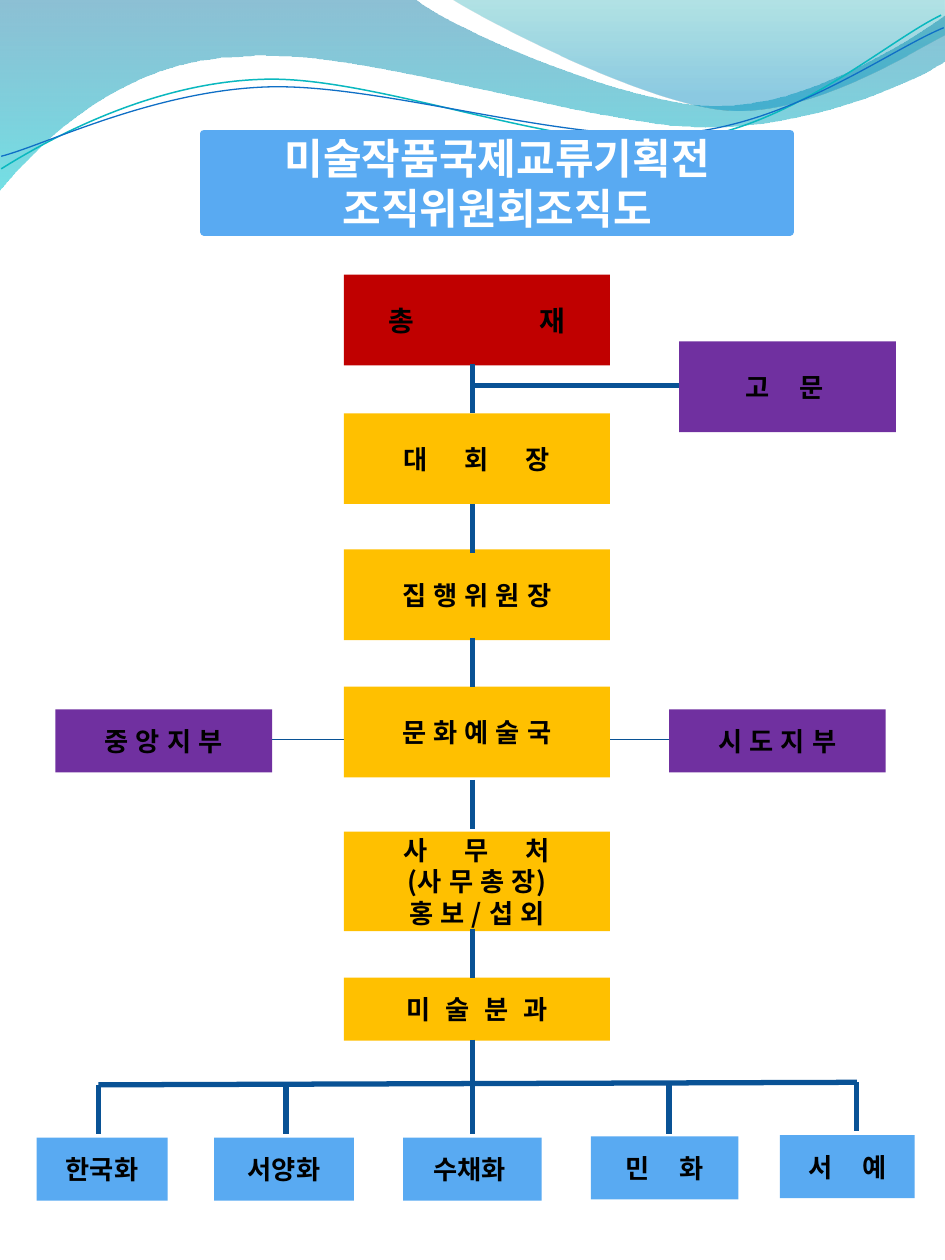
from dataclasses import dataclass

from lxml.etree import SubElement
from pptx import Presentation
from pptx.dml.color import RGBColor
from pptx.enum.shapes import MSO_CONNECTOR, MSO_SHAPE
from pptx.enum.text import MSO_ANCHOR, MSO_AUTO_SIZE, PP_ALIGN
from pptx.oxml.ns import qn
from pptx.util import Emu, Inches, Pt

COLORS = {
    "red": "C00000", "gold": "FFC000", "purple": "7030A0", "sky": "59AAF2",
    "link": "095295", "black": "000000", "white": "FFFFFF",
    "teal": "0AB8BF", "blue": "0F6FC6",
}
FONT = "Noto Sans CJK KR"
COLUMNS, ROWS = 75, 100
WIDTH, HEIGHT = Inches(7.5), Inches(10)
# Shares of the font size
SPACE_WIDTH, GAP_WIDTH, LINE_HEIGHT = 0.22, 0.28, 1.2
LOOSE_TRACKING = 0.35  # points, for labels with one space between letters

TRUNK_COL, TRUNK_LEFT, TRUNK_COLS, LINK_ROWS = 37.5, 27.3, 21.1, 3.9


@dataclass
class Box:
    lines: list[str]
    col: float
    row: float
    cols: float
    rows: float
    color: str
    gaps: tuple[int, ...] = (1,)  # width of each line's gaps, in spaces
    size: float = 15


@dataclass
class Link:
    start: tuple[float, float]
    end: tuple[float, float]
    weight: float = 3


@dataclass
class Stop:
    position: float
    color: str
    alpha: int


@dataclass
class Wave:
    """Steps of length two are line ends; those of length six are cubic curves."""
    start: tuple[float, float]
    steps: list[tuple[float, ...]]
    stops: tuple[Stop, ...] = ()
    color: str = ""
    weight: float = 0


def trunk_box(lines: list[str], row: float, rows: float = 7.2, **options) -> Box:
    return Box(lines, TRUNK_LEFT, row, TRUNK_COLS, rows, **{"color": "gold", **options})


WAVES = [
    Wave((0, 0), [
        (33, 0), (35.7, 2.2, 49.8, 8.4, 56.9, 8.4), (64, 8.4, 71.9, 3.4, 75, 1.2),
        (75, 4.8), (73.8, 5.8, 65.2, 10.1, 55.9, 10.1),
        (46.6, 10, 28.6, 3.7, 19.3, 4.5), (9.7, 4.7, 3.4, 11.1, 0, 15.1),
    ], stops=(Stop(0, "0074A1", 45), Stop(1, "00C6CF", 55))),
    Wave((35.9, 0), [
        (38.2, 1.5, 51.1, 8.2, 57.7, 8.7), (64.2, 9.2, 72.1, 4.3, 75, 2.8), (75, 0),
    ], stops=(Stop(0, "00A1A9", 30), Stop(0.8, "008BBF", 45))),
    Wave((0.1, 13.4), [
        (3.6, 11.2, 11.8, 6.6, 20.7, 6.3), (29.6, 5.9, 44.5, 12.1, 53.5, 11.2),
        (62.6, 10.4, 70.3, 3.3, 74.7, 1.2),
    ], color="teal", weight=0.85),
    Wave((0.1, 12.4), [
        (3.6, 11.5, 12.2, 7.2, 21.2, 6.9), (30.2, 6.6, 44.9, 11.4, 53.8, 10.6),
        (62.8, 9.9, 70.5, 4, 74.9, 2.2),
    ], color="blue", weight=0.75),
]
TITLE = Box(["미술작품국제교류기획전", "조직위원회조직도"], 16.2, 10.6, 46.5, 7.8, "sky", size=24)
BOXES = [
    trunk_box(["총 재"], 21.8, color="red", gaps=(16,), size=16),
    trunk_box(["대 회 장"], 32.8, gaps=(5,)),
    trunk_box(["집 행 위 원 장"], 43.6),
    trunk_box(["사 무 처", "(사 무 총 장)", "홍 보 / 섭 외"], 66, 7.9, gaps=(5, 1, 1)),
    trunk_box(["미 술 분 과"], 77.6, 5, gaps=(2,)),
    Box(["시 도 지 부"], 53.1, 56.3, 17.2, 5, "purple"),
    Box(["중 앙 지 부"], 4.4, 56.3, 17.2, 5, "purple"),
    Box(["한국화"], 2.9, 90.3, 10.4, 5, "sky"),
    Box(["서양화"], 17, 90.3, 11.1, 5, "sky"),
    Box(["수채화 "], 32, 90.3, 11, 5, "sky"),
    Box(["민 화"], 46.9, 90.2, 11.7, 5, "sky", gaps=(4,)),
    trunk_box(["문 화 예 술 국"], 54.5),
    Box(["고 문 "], 53.9, 27.1, 17.2, 7.2, "purple", gaps=(4,)),
    Box(["서 예"], 61.9, 90.1, 10.7, 5, "sky", gaps=(4,)),
]
SIDE_LINKS = [Link((left, 58.7), (left + 7, 58.7), 0.75) for left in (46.9, 20.3)]
DROPS = [(7.8, 86.1), (22.7, 86.1), (TRUNK_COL, 86.1), (53.1, 86.1), (68, 85.9)]
TRUNK_LINKS = [(TRUNK_COL, row) for row in (28.9, 40, 50.6, 61.9, 73.7, 82.5)]
MAIN_LINKS = [Link((col, row), (col, row + LINK_ROWS)) for col, row in TRUNK_LINKS + DROPS]
MAIN_LINKS += [Link((TRUNK_COL, 30.6), (53.9, 30.6)), Link(DROPS[0], DROPS[-1])]


def across(columns: float) -> Emu:
    return Emu(round(WIDTH * columns / COLUMNS))


def down(rows: float) -> Emu:
    return Emu(round(HEIGHT * rows / ROWS))


def rgb(name: str) -> RGBColor:
    return RGBColor.from_string(COLORS[name])


def bend(shape, wave: Wave) -> None:
    """Join each three line segments that stand for a curve into one cubic."""
    segments = iter(list(shape._element.spPr.iter(qn("a:lnTo"))))
    for step in wave.steps:
        curve = next(segments)
        if len(step) == 6:
            curve.tag = qn("a:cubicBezTo")
            for _ in range(2):
                segment = next(segments)
                curve.append(segment[0])
                segment.getparent().remove(segment)


def draw_wave(slide, wave: Wave) -> None:
    points = [(across(step[i]), down(step[i + 1]))
              for step in wave.steps for i in range(0, len(step), 2)]
    builder = slide.shapes.build_freeform(across(wave.start[0]), down(wave.start[1]))
    builder.add_line_segments(points, close=bool(wave.stops))
    shape = builder.convert_to_shape()
    bend(shape, wave)
    shape.shadow.inherit = False
    if not wave.stops:
        shape.fill.background()
        shape.line.color.rgb = rgb(wave.color)
        shape.line.width = Pt(wave.weight)
        return
    shape.line.fill.background()
    shape.fill.gradient()
    shape.fill.gradient_angle = 270
    for target, stop in zip(shape.fill.gradient_stops, wave.stops):
        target.position = stop.position
        target.color.rgb = RGBColor.from_string(stop.color)
    for color, stop in zip(shape._element.spPr.iter(qn("a:srgbClr")), wave.stops):
        SubElement(color, qn("a:alpha"), val=str(stop.alpha * 1000))


def track(font, points: float) -> None:
    font._rPr.set("spc", str(round(points * 100)))


def write_lines(shape, box: Box, color: str) -> None:
    frame = shape.text_frame
    frame.word_wrap = True
    frame.auto_size = MSO_AUTO_SIZE.NONE
    frame.vertical_anchor = MSO_ANCHOR.MIDDLE
    gaps = box.gaps if len(box.gaps) == len(box.lines) else box.gaps * len(box.lines)
    for index, (line, gap) in enumerate(zip(box.lines, gaps)):
        paragraph = frame.add_paragraph() if index else frame.paragraphs[0]
        paragraph.alignment = PP_ALIGN.CENTER
        paragraph.line_spacing = Pt(box.size * LINE_HEIGHT)
        font = paragraph.font
        font.name, font.size, font.bold = FONT, Pt(box.size), True
        font.color.rgb = rgb(color)
        SubElement(font._rPr, qn("a:ea"), typeface=FONT)
        if gap == 1:
            paragraph.add_run().text = line
            if " " in line.strip():
                track(font, LOOSE_TRACKING)
            continue
        for position, letter in enumerate(line.split(" ", line.strip().count(" "))):
            if position:
                space = paragraph.add_run()
                space.text = " "
                track(space.font, (gap * GAP_WIDTH - SPACE_WIDTH) * box.size)
            paragraph.add_run().text = letter


def draw_box(slide, box: Box) -> None:
    shape = slide.shapes.add_shape(MSO_SHAPE.RECTANGLE, across(box.col), down(box.row),
                                   across(box.cols), down(box.rows))
    shape.shadow.inherit = False
    shape.fill.solid()
    shape.fill.fore_color.rgb = rgb(box.color)
    shape.line.fill.background()
    write_lines(shape, box, "black")


def draw_title(slide, box: Box) -> None:
    """Give the title placeholder a rounded frame and lift it above the waves."""
    title = slide.shapes.title
    title.left, title.top = across(box.col), down(box.row)
    title.width, title.height = across(box.cols), down(box.rows)
    geometry = SubElement(title._element.spPr, qn("a:prstGeom"), prst="roundRect")
    guides = SubElement(geometry, qn("a:avLst"))
    SubElement(guides, qn("a:gd"), name="adj", fmla="val 16667")
    title.fill.solid()
    title.fill.fore_color.rgb = rgb(box.color)
    title.line.color.rgb = rgb(box.color)
    title.line.width = Pt(4.5)
    write_lines(title, box, "white")
    slide.shapes._spTree.append(title._element)


def draw_link(slide, link: Link) -> None:
    (col, row), (end_col, end_row) = link.start, link.end
    connector = slide.shapes.add_connector(MSO_CONNECTOR.STRAIGHT, across(col), down(row),
                                           across(end_col), down(end_row))
    connector.line.color.rgb = rgb("link")
    connector.line.width = Pt(link.weight)
    SubElement(connector._element.spPr, qn("a:effectLst"))


def main() -> None:
    deck = Presentation()
    deck.slide_width, deck.slide_height = WIDTH, HEIGHT
    slide = deck.slides.add_slide(deck.slide_layouts[5])
    for wave in WAVES:
        draw_wave(slide, wave)
    draw_title(slide, TITLE)
    for link in SIDE_LINKS:
        draw_link(slide, link)
    for box in BOXES:
        draw_box(slide, box)
    for link in MAIN_LINKS:
        draw_link(slide, link)
    deck.save("out.pptx")


if __name__ == "__main__":
    main()
